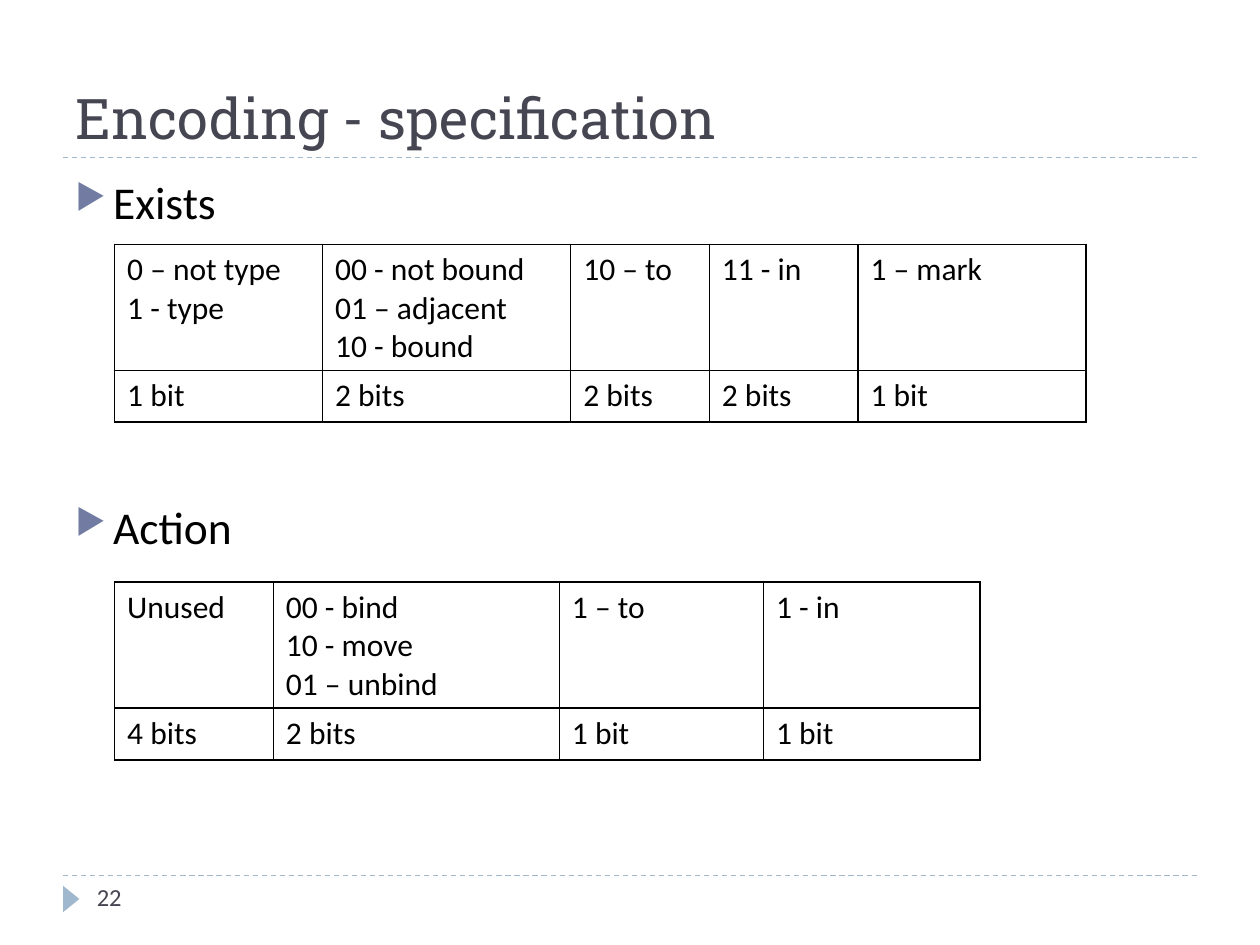
from dataclasses import dataclass

from lxml.etree import SubElement
from pptx import Presentation
from pptx.dml.color import RGBColor as Color
from pptx.enum.dml import MSO_LINE as Dash
from pptx.enum.shapes import MSO_CONNECTOR as Connector, MSO_SHAPE as Shape
from pptx.enum.text import MSO_ANCHOR as Anchor, MSO_AUTO_SIZE as AutoSize, PP_ALIGN as Align
from pptx.oxml.ns import qn
from pptx.util import Inches, Pt


@dataclass(frozen=True)
class Theme:
    """Colours, fonts and type sizes of the slide."""
    ink: str = "000000"
    heading: str = "464653"
    accent: str = "9FB8CD"
    bullet: str = "727CA3"
    title_font: str = "Roboto Slab"
    body_font: str = "Calibri"
    title_size: int = 32
    body_size: int = 26
    cell_size: int = 18
    number_size: int = 14


class SlideBuilder:
    """Places styled elements on a grid of 20 columns by 15 rows."""

    def __init__(self, deck, theme):
        self.theme = theme
        self.slide = deck.slides.add_slide(deck.slide_layouts[5])
        self.column = deck.slide_width / 20
        self.row = deck.slide_height / 15

    def place(self, left, top, width, height):
        """Turn grid units into slide lengths."""
        return (round(left * self.column), round(top * self.row),
                round(width * self.column), round(height * self.row))

    def style(self, para, font, size, color):
        """Set the font of a left-aligned paragraph."""
        para.alignment = Align.LEFT
        para.font.name, para.font.size = font, Pt(size)
        para.font.color.rgb = Color.from_string(color)

    def title(self, text, *area):
        """Move, fill and format the title placeholder."""
        box = self.slide.shapes.title
        box.left, box.top, box.width, box.height = self.place(*area)
        frame = box.text_frame
        frame.text = text
        frame.vertical_anchor, frame.auto_size = Anchor.BOTTOM, AutoSize.NONE
        self.style(frame.paragraphs[0], self.theme.title_font,
                   self.theme.title_size, self.theme.heading)

    def rule(self, top):
        """Draw a dashed line between the side margins."""
        left, y, width, _ = self.place(1, top, 18, 0)
        line = self.slide.shapes.add_connector(Connector.STRAIGHT, left, y, left + width, y)
        line.line.color.rgb = Color.from_string(self.theme.accent)
        line.line.width, line.line.dash_style = Pt(0.75), Dash.DASH
        SubElement(line._element.spPr, qn("a:effectLst"))

    def marker(self, *area):
        """Draw a triangle that points right."""
        shape = self.slide.shapes.add_shape(Shape.ISOSCELES_TRIANGLE, *self.place(*area))
        shape.rotation = 90
        shape.shadow.inherit = False
        shape.fill.solid()
        shape.fill.fore_color.rgb = Color.from_string(self.theme.accent)
        shape.line.fill.background()

    def text_frame(self, text, *area):
        """Add a wrapping text box and return its frame."""
        frame = self.slide.shapes.add_textbox(*self.place(*area)).text_frame
        frame.word_wrap = True
        frame.text = text
        return frame

    def page_number(self, text, *area):
        """Add the page number."""
        frame = self.text_frame(text, *area)
        self.style(frame.paragraphs[0], self.theme.body_font,
                   self.theme.number_size, self.theme.heading)

    def bullets(self, items, gap, *area):
        """Add bulleted lines with a gap in points between them."""
        frame = self.text_frame("\n".join(items), *area)
        for index, para in enumerate(frame.paragraphs):
            para.space_before = Pt(gap if index else 6)
            props = para._p.get_or_add_pPr()
            props.set("marL", str(Inches(0.3)))
            props.set("indent", str(Inches(-0.3)))
            color = SubElement(props, qn("a:buClr"))
            SubElement(color, qn("a:srgbClr"), val=self.theme.bullet)
            SubElement(props, qn("a:buSzPct"), val="76000")
            SubElement(props, qn("a:buChar"), char="▶")
            self.style(para, self.theme.body_font, self.theme.body_size, self.theme.ink)

    def border(self, cell):
        """Outline all four sides of a cell."""
        props = cell._tc.get_or_add_tcPr()
        for side in ("lnL", "lnR", "lnT", "lnB"):
            line = SubElement(props, qn(f"a:{side}"), w=str(Pt(1)))
            fill = SubElement(line, qn("a:solidFill"))
            SubElement(fill, qn("a:srgbClr"), val=self.theme.ink)

    def table(self, left, top, widths, heights, rows):
        """Add a plain bordered table."""
        area = self.place(left, top, sum(widths), sum(heights))
        table = self.slide.shapes.add_table(len(rows), len(widths), *area).table
        table.first_row = table.horz_banding = False
        for column, width in zip(table.columns, widths):
            column.width = round(width * self.column)
        for row, height, texts in zip(table.rows, heights, rows):
            row.height = round(height * self.row)
            for cell, text in zip(row.cells, texts):
                cell.text = text
                self.border(cell)
                cell.fill.background()
                for para in cell.text_frame.paragraphs:
                    self.style(para, self.theme.body_font, self.theme.cell_size, self.theme.ink)


def main():
    """Build the encoding slide."""
    deck = Presentation()
    deck.slide_width, deck.slide_height = Inches(10), Inches(7.5)
    page = SlideBuilder(deck, Theme())
    for top in (13.9, 2.5):
        page.rule(top)
    page.marker(0.92, 14.14, 0.42, 0.26)
    page.title("Encoding - specification", 1, 0.34, 18, 2.16)
    page.page_number("22", 1.34, 13.9, 4.34, 0.8)
    page.bullets(["Exists", "Action"], 154.5, 1, 2.66, 18, 10.8)
    table_left, heights = 1.82, (2, 0.82)
    page.table(table_left, 3.88, (3.3, 3.94, 2.2, 2.36, 3.62), heights, [
        ["0 – not type\n1 - type", "00 - not bound\n01 – adjacent\n10 - bound",
         "10 – to", "11 - in", "1 – mark"],
        ["1 bit", "2 bits", "2 bits", "2 bits", "1 bit"],
    ])
    page.table(table_left, 9.24, (2.52, 4.54, 3.24, 3.44), heights, [
        ["Unused", "00 - bind\n10 - move\n01 – unbind", "1 – to", "1 - in"],
        ["4 bits", "2 bits", "1 bit", "1 bit"],
    ])
    deck.save("out.pptx")


if __name__ == "__main__":
    main()
